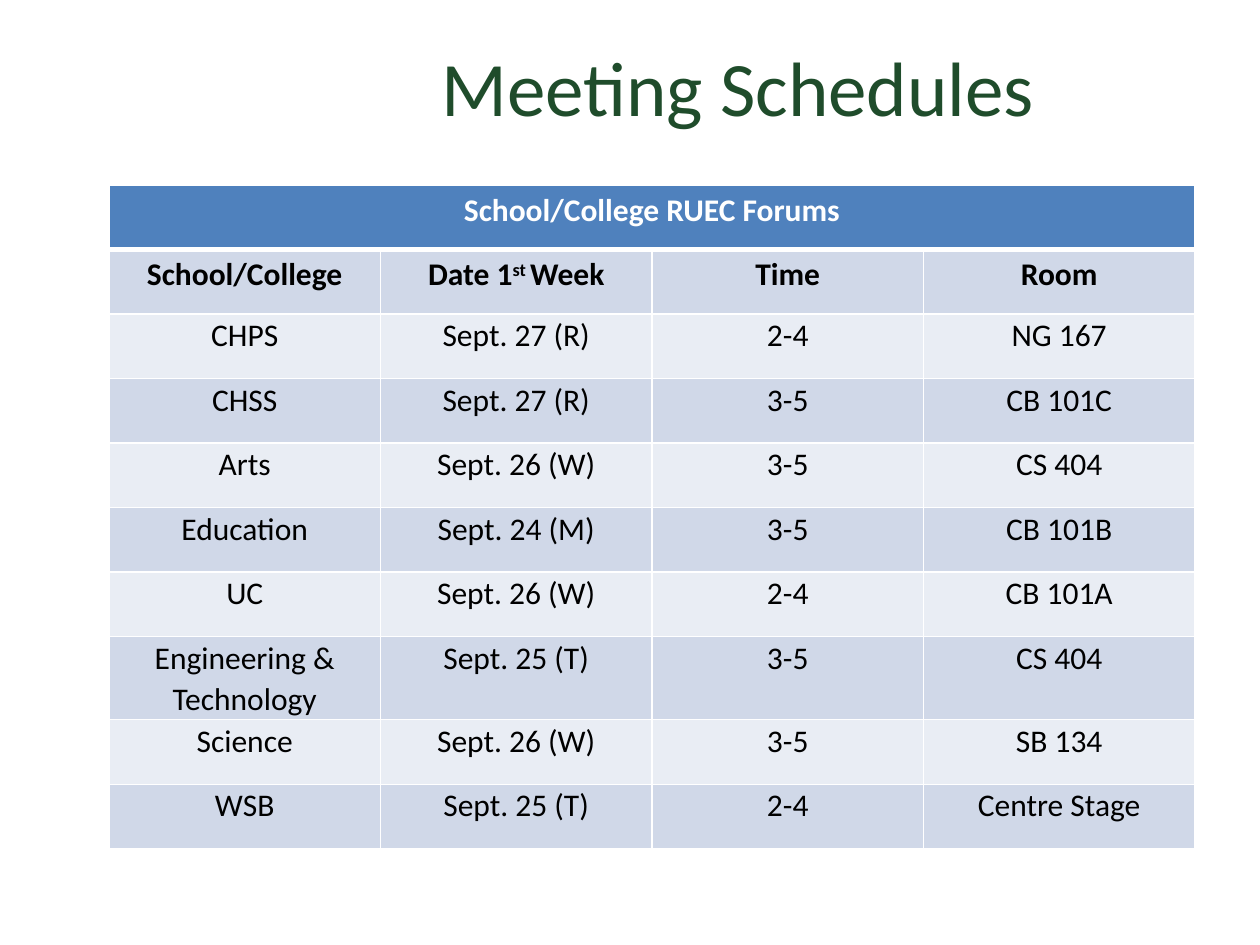
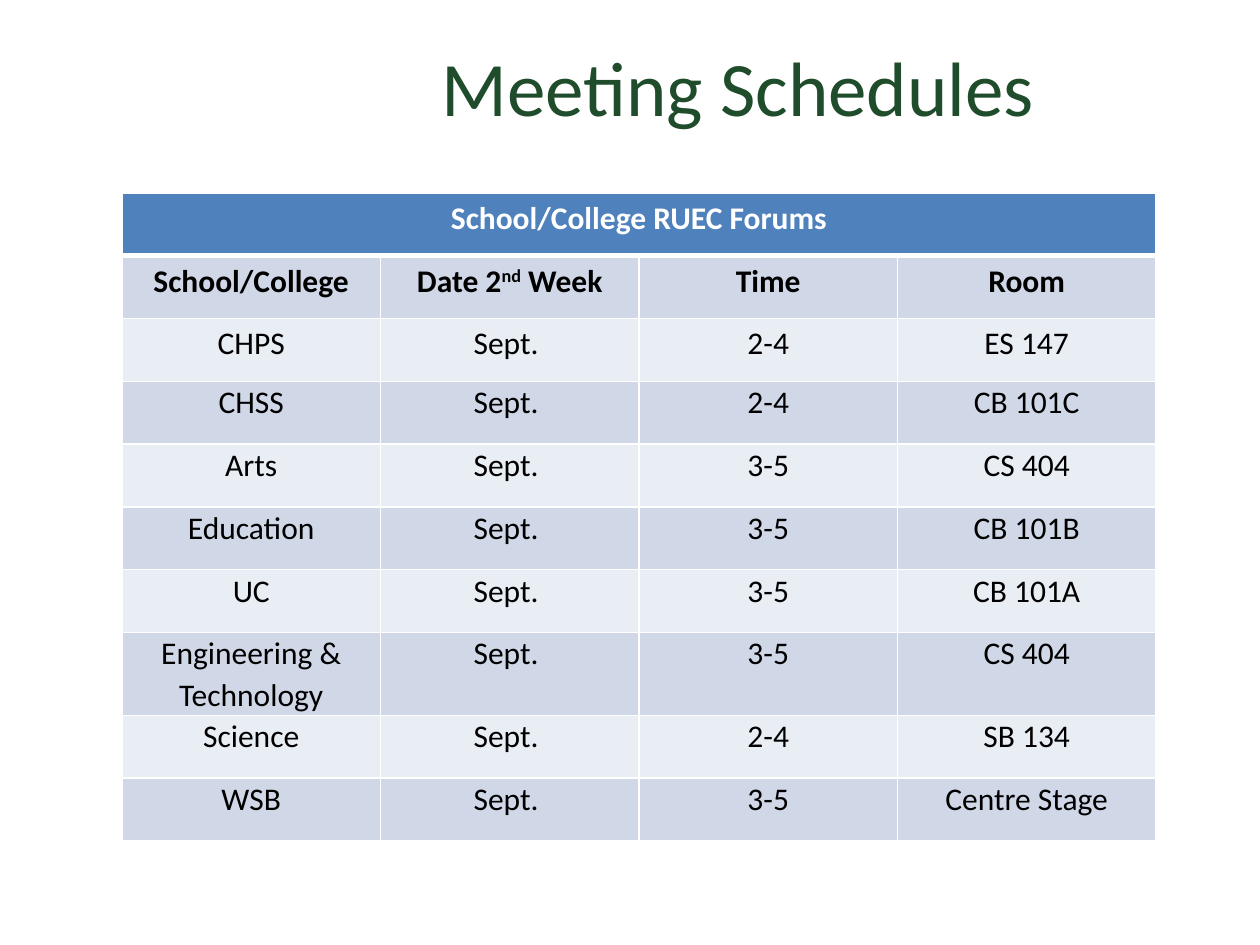
from lxml.etree import SubElement
from pptx import Presentation
from pptx.dml.color import RGBColor
from pptx.enum.text import MSO_ANCHOR, PP_ALIGN
from pptx.oxml.ns import qn
from pptx.util import Emu, Pt

PX_PER_INCH = 126


def px(n):
    return Emu(round(n * 914400 / PX_PER_INCH))


def rgb(value):
    return RGBColor.from_string(value)


class Deck:
    """Shared style plus the slide being drawn."""
    FONT = "Calibri"
    GREEN, BLUE, WHITE, BLACK = "1F4C2B", "4F81BD", "FFFFFF", "000000"
    BANDS = ("D0D8E8", "E9EDF4")
    TALL_ROW = 83

    def __init__(self):
        self.prs = Presentation()
        self.prs.slide_width = px(1260)
        self.prs.slide_height = px(945)
        self.s = None

    def slide(self):
        self.s = self.prs.slides.add_slide(self.prs.slide_layouts[6])
        fill = self.s.background.fill
        fill.solid()
        fill.fore_color.rgb = rgb(self.WHITE)

    def run(self, p, text, size, color, bold=False, raised=False):
        r = p.add_run()
        r.text = text
        r.font.name = self.FONT
        r.font.size = Pt(size)
        r.font.bold = bold
        r.font.color.rgb = rgb(color)
        if raised:
            r.font._element.set("baseline", "30000")

    def title(self, text):
        sp = self.s.shapes.add_textbox(px(319), px(25), px(838), px(122))
        tf = sp.text_frame
        tf.word_wrap = True
        tf.vertical_anchor = MSO_ANCHOR.MIDDLE
        p = tf.paragraphs[0]
        p.alignment = PP_ALIGN.CENTER
        self.run(p, text, 44, self.GREEN)

    def borders(self, cell, top=1, bottom=1):
        tcPr = cell._tc.get_or_add_tcPr()
        for side, width in (("L", 1), ("R", 1), ("T", top), ("B", bottom)):
            ln = SubElement(tcPr, qn(f"a:ln{side}"), w=str(Pt(width)))
            color = SubElement(SubElement(ln, qn("a:solidFill")), qn("a:srgbClr"))
            color.set("val", self.WHITE)

    def cell(self, cell, runs, fill, color, bold, compact):
        cell.fill.solid()
        cell.fill.fore_color.rgb = rgb(fill)
        p = cell.text_frame.paragraphs[0]
        p.alignment = PP_ALIGN.CENTER
        if compact:
            cell.margin_left = cell.margin_right = px(9)
            cell.margin_top = cell.margin_bottom = 0
            p.line_spacing = 1.07
        # Every second run of a cell is raised
        for i, text in enumerate(runs):
            self.run(p, text, 18, color, bold, raised=i % 2 == 1)

    def table(self, left, top, width, height, heading, rows, first_compact):
        n_rows, n_cols = len(rows) + 1, len(rows[0])
        tbl = self.s.shapes.add_table(n_rows, n_cols, px(left), px(top),
                                      px(width), px(height)).table
        tbl.first_row = tbl.horz_banding = False
        for col in tbl.columns:
            col.width = px(width / n_cols)
        for row in tbl.rows:
            row.height = px((height - self.TALL_ROW) / (n_rows - 1))

        # Heading across all columns
        for cell in tbl.rows[0].cells:
            self.borders(cell, bottom=3)
        tbl.cell(0, 0).merge(tbl.cell(0, n_cols - 1))
        self.cell(tbl.cell(0, 0), [heading], self.BLUE, self.WHITE, True, False)

        # Column names, then banded rows
        for i, row in enumerate(rows, 1):
            if row[0] == TWO_LINE_SCHOOL:
                tbl.rows[i].height = px(self.TALL_ROW)
            for j, value in enumerate(row):
                cell = tbl.cell(i, j)
                self.borders(cell, top=3 if i == 1 else 1)
                runs = [value] if isinstance(value, str) else value
                self.cell(cell, runs, self.BANDS[(i - 1) % 2], self.BLACK,
                          i == 1, i >= first_compact)


TWO_LINE_SCHOOL = "Engineering & Technology"
SCHOOLS = ["CHPS", "CHSS", "Arts", "Education", "UC", TWO_LINE_SCHOOL,
           "Science", "WSB"]
ROOMS = ["CB 101C", "CS 404", "CB 101B", "CB 101A", "CS 404", "SB 134",
         "Centre Stage"]

WEEKS = [
    dict(box=(109, 185, 1086, 664), first_compact=2,
         date=("Date 1", "st ", "Week"), first_room="NG 167",
         dates=["Sept. 27 (R)", "Sept. 27 (R)", "Sept. 26 (W)", "Sept. 24 (M)",
                "Sept. 26 (W)", "Sept. 25 (T)", "Sept. 26 (W)", "Sept. 25 (T)"],
         times=["2-4", "3-5", "3-5", "3-5", "2-4", "3-5", "3-5", "2-4"]),
    dict(box=(122, 193, 1034, 648), first_compact=3,
         date=("Date 2", "nd", " Week"), first_room="ES 147",
         dates=["Sept. "] * len(SCHOOLS),
         times=["2-4", "2-4", "3-5", "3-5", "3-5", "3-5", "2-4", "3-5"]),
]


def main():
    deck = Deck()
    for week in WEEKS:
        deck.slide()
        deck.title("Meeting Schedules")
        names = ("School/College", week["date"], "Time", "Room")
        rooms = [week["first_room"]] + ROOMS
        rows = [names, *zip(SCHOOLS, week["dates"], week["times"], rooms)]
        deck.table(*week["box"], "School/College RUEC Forums", rows,
                   week["first_compact"])
    deck.prs.save("out.pptx")


if __name__ == "__main__":
    main()
